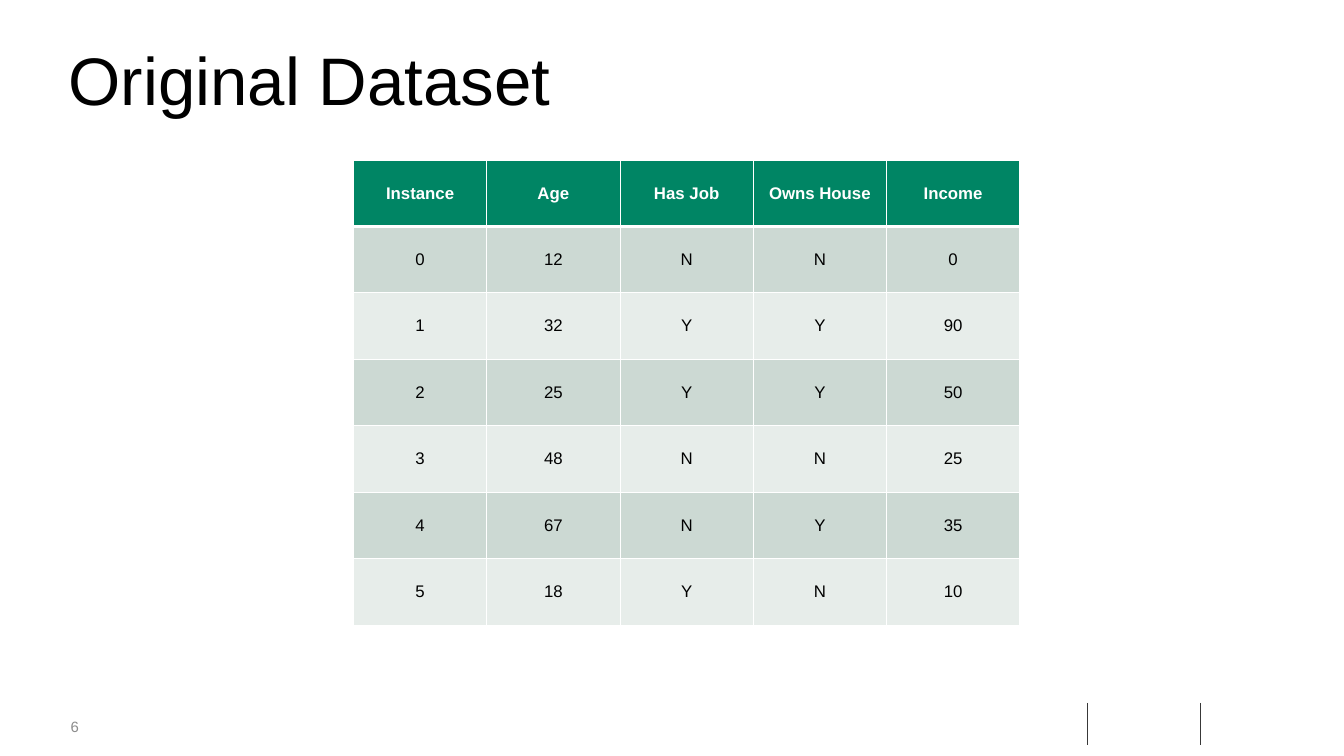
from dataclasses import dataclass

from lxml import etree
from pptx import Presentation
from pptx.dml.color import RGBColor
from pptx.enum.shapes import MSO_CONNECTOR
from pptx.enum.text import MSO_ANCHOR, PP_ALIGN
from pptx.oxml.ns import qn
from pptx.util import Pt

STRAIGHT = MSO_CONNECTOR.STRAIGHT
TOP, MIDDLE = MSO_ANCHOR.TOP, MSO_ANCHOR.MIDDLE
LEFT, CENTER = PP_ALIGN.LEFT, PP_ALIGN.CENTER


@dataclass(frozen=True)
class Theme:
    font: str = "Arial"
    black: str = "000000"
    white: str = "FFFFFF"
    green: str = "008564"
    dark_band: str = "CCD9D3"
    light_band: str = "E7EDEA"
    gray: str = "8C8C8C"
    rule: str = "383838"
    title_size: int = 72
    table_size: int = 18
    number_size: int = 16


THEME = Theme()

DATASET = [
    ["Instance", "Age", "Has Job", "Owns House", "Income"],
    ["0", "12", "N", "N", "0"],
    ["1", "32", "Y", "Y", "90"],
    ["2", "25", "Y", "Y", "50"],
    ["3", "48", "N", "N", "25"],
    ["4", "67", "N", "Y", "35"],
    ["5", "18", "Y", "N", "10"],
]


def style_paragraph(para, size, color, bold=False, align=LEFT):
    para.alignment = align
    para.font.name = THEME.font
    para.font.size = Pt(size)
    para.font.bold = bold
    para.font.color.rgb = RGBColor.from_string(color)


def add_text(page, text, left, top, width, height, size, color,
             anchor=TOP, inset=(0, 0), spacing=1.0):
    box = page.shapes.add_textbox(Pt(left), Pt(top), Pt(width), Pt(height))
    frame = box.text_frame
    frame.word_wrap = True
    frame.vertical_anchor = anchor
    frame.margin_left = frame.margin_right = Pt(inset[0])
    frame.margin_top = frame.margin_bottom = Pt(inset[1])
    para = frame.paragraphs[0]
    para.text = text
    para.line_spacing = spacing
    style_paragraph(para, size, color)


def add_rule(page, x, top, bottom):
    rule = page.shapes.add_connector(STRAIGHT, Pt(x), Pt(top), Pt(x), Pt(bottom))
    rule.line.color.rgb = RGBColor.from_string(THEME.rule)
    rule.line.width = Pt(1)
    etree.SubElement(rule._element.spPr, qn("a:effectLst"))


def set_borders(cell, widths):
    """Draw white borders; widths maps each side to points."""
    properties = cell._tc.get_or_add_tcPr()
    for position, (side, width) in enumerate(widths.items()):
        line = etree.Element(qn(f"a:ln{side}"), w=str(Pt(width)))
        fill = etree.SubElement(line, qn("a:solidFill"))
        etree.SubElement(fill, qn("a:srgbClr"), val=THEME.white)
        properties.insert(position, line)


def add_dataset_table(page, rows, left, top, column_width, row_height):
    count, columns = len(rows), len(rows[0])
    table = page.shapes.add_table(
        count, columns, Pt(left), Pt(top),
        Pt(column_width * columns), Pt(row_height * count)).table
    for column in table.columns:
        column.width = Pt(column_width)
    for r, values in enumerate(rows):
        table.rows[r].height = Pt(row_height)
        header = r == 0
        band = THEME.dark_band if r % 2 else THEME.light_band
        for c, value in enumerate(values):
            cell = table.cell(r, c)
            cell.text = value
            cell.vertical_anchor = MIDDLE
            cell.fill.solid()
            cell.fill.fore_color.rgb = RGBColor.from_string(
                THEME.green if header else band)
            style_paragraph(cell.text_frame.paragraphs[0], THEME.table_size,
                            THEME.white if header else THEME.black,
                            bold=header, align=CENTER)
            set_borders(cell, {"L": 1, "R": 1, "T": 3 if r == 1 else 1,
                               "B": 3 if header else 1})


def main():
    deck = Presentation()
    deck.slide_width, deck.slide_height = Pt(1440), Pt(810)
    page = deck.slides.add_slide(deck.slide_layouts[6])

    # Footer rules and page number
    for x in (1165, 1286):
        add_rule(page, x, 753, 798.5)
    add_text(page, "6", 75.6, 769, 42.5, 19.4, THEME.number_size, THEME.gray,
             anchor=MIDDLE)

    # Title
    add_text(page, "Original Dataset", 69.8, 43.2, 1259.3, 131.8,
             THEME.title_size, THEME.black, inset=(3.6, 8), spacing=0.9)

    # Dataset
    add_dataset_table(page, DATASET, 378.7, 171.4, 142.8, 71.2)

    deck.save("out.pptx")


if __name__ == "__main__":
    main()
